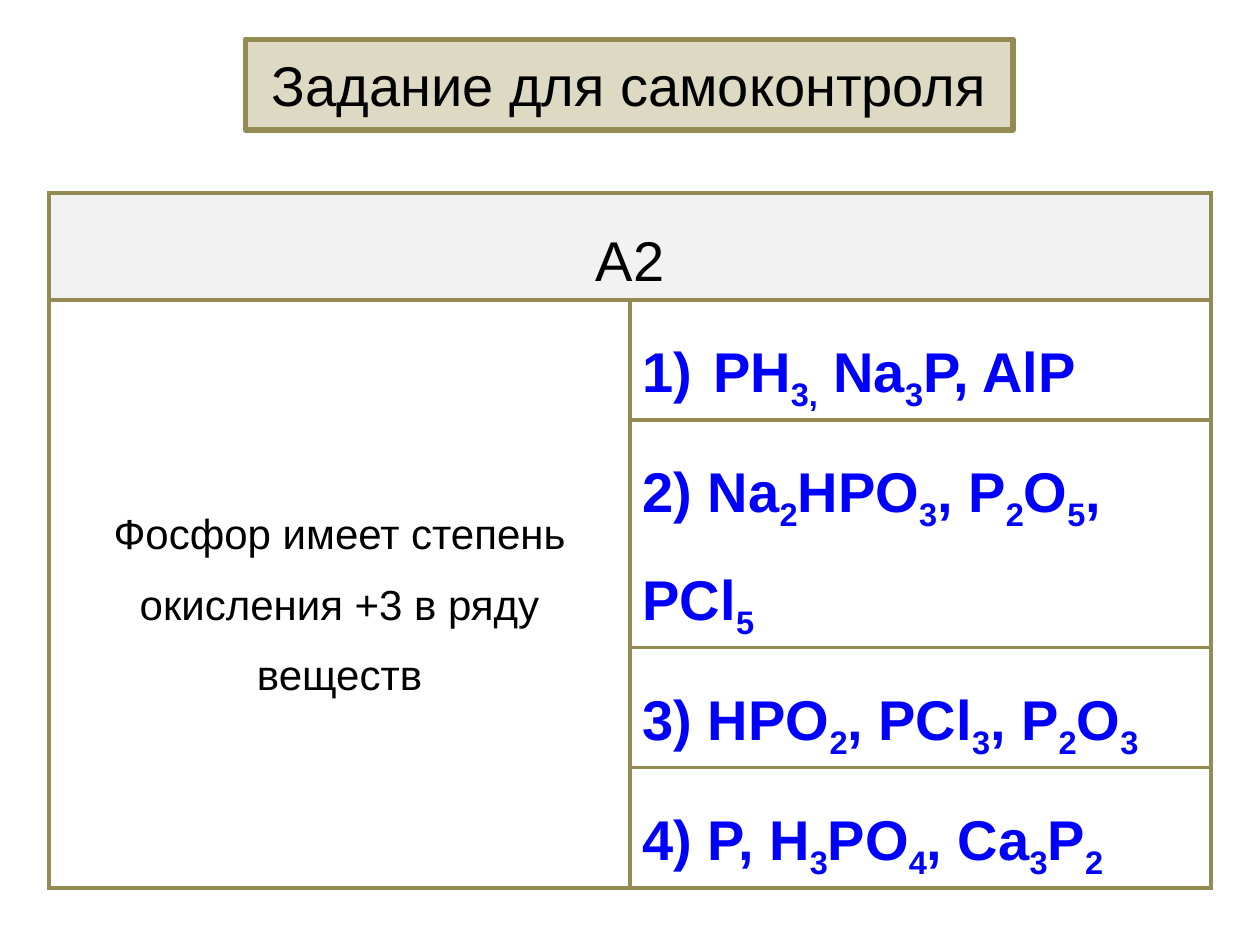
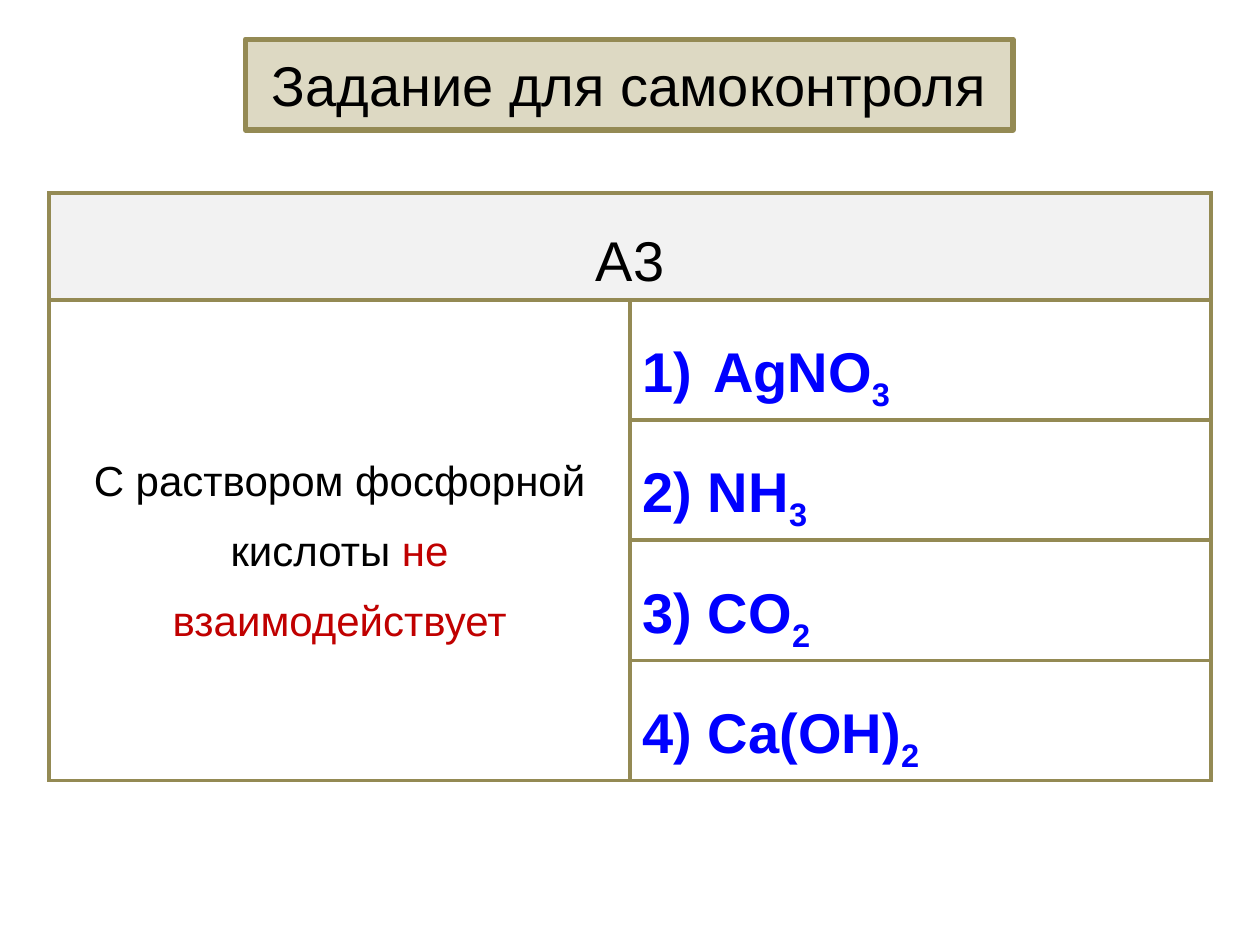
from lxml import etree
from pptx import Presentation
from pptx import util as u
from pptx.dml.color import RGBColor
from pptx.enum import text as t
from pptx.oxml.ns import qn

HUES = {"band": "DDD9C3", "edge": "948A54", "head": "F2F2F2", "page": "FFFFFF",
        "ink": "000000", "blue": "0000FF", "red": "C00000"}
FONT = "Arial"
TITLE = "Задание для самоконтроля"
TITLE_BOX = (4.95, 0.79, 15.47, 1.83)
GRID_BOX = (0.99, 3.89, 23.42)
HEAD_ROW, LINE_ROW, WRAP_ROW = 2.14, 2.42, 4.58
INDENT = 1.42

TASKS = [
    ("А2", "Фосфор имеет степень окисления +3 в ряду веществ",
     [("PH{3,} Na{3}P, AlP", LINE_ROW),
      ("2) Na{2}HPO{3}, P{2}O{5}, PCl{5}", WRAP_ROW),
      ("3) HPO{2}, PCl{3}, P{2}O{3}", LINE_ROW),
      ("4) P, H{3}PO{4}, Ca{3}P{2}", LINE_ROW)]),
    ("А3", "С раствором фосфорной кислоты {не взаимодействует}",
     [("AgNO{3}", LINE_ROW),
      ("2) NH{3}", LINE_ROW),
      ("3) CO{2}", LINE_ROW),
      ("4) Ca(OH){2}", LINE_ROW)]),
]


def hue(name):
    return RGBColor.from_string(HUES[name])


def paint(fill, name):
    fill.solid()
    fill.fore_color.rgb = hue(name)


def write(frame, words, size=32, color="ink", bold=False, align=t.PP_ALIGN.LEFT,
          space=1.0, mark=None):
    """Write one paragraph; parts in braces take the mark colour, or else go subscript."""
    para = frame.paragraphs[0]
    para.alignment = align
    para.line_spacing = space
    for i, part in enumerate(words.replace("}", "{").split("{")):
        if not part:
            continue
        run = para.add_run()
        run.text = part
        font = run.font
        font.name, font.size, font.bold = FONT, u.Pt(size), bold
        font.color.rgb = hue(mark if mark and i % 2 else color)
        if i % 2 and not mark:
            font._element.set("baseline", "-25000")
    return para


def number(para):
    """Number a paragraph as 1) with a hanging indent."""
    props = para._p.get_or_add_pPr()
    props.set("marL", str(u.Cm(INDENT)))
    props.set("indent", str(-u.Cm(INDENT)))
    etree.SubElement(props, qn("a:buFont"), typeface=FONT)
    etree.SubElement(props, qn("a:buAutoNum"), type="arabicParenR")


def frame_cell(cell, fill):
    props = cell._tc.get_or_add_tcPr()
    for side in ("lnL", "lnR", "lnT", "lnB"):
        line = etree.SubElement(props, qn("a:" + side), w=str(u.Pt(2.25)))
        solid = etree.SubElement(line, qn("a:solidFill"))
        etree.SubElement(solid, qn("a:srgbClr"), val=HUES["edge"])
    paint(cell.fill, fill)


def add_title(slide, box):
    title = slide.shapes.title
    title.left, title.top, title.width, title.height = map(u.Cm, box)
    paint(title.fill, "band")
    title.line.color.rgb = hue("edge")
    title.line.width = u.Pt(3)
    frame = title.text_frame
    frame.auto_size = t.MSO_AUTO_SIZE.NONE
    frame.vertical_anchor = t.MSO_ANCHOR.MIDDLE
    write(frame, TITLE, align=t.PP_ALIGN.CENTER)


def add_grid(slide, box, label, ask, picks):
    left, top, width = box
    rows = [HEAD_ROW] + [tall for _, tall in picks]
    grid = slide.shapes.add_table(len(rows), 2, u.Cm(left), u.Cm(top),
                                  u.Cm(width), u.Cm(sum(rows))).table
    grid.first_row = grid.horz_banding = False
    for i, tall in enumerate(rows):
        grid.rows[i].height = u.Cm(tall)
        for cell in grid.rows[i].cells:
            frame_cell(cell, "page" if i else "head")

    head, body = grid.cell(0, 0), grid.cell(1, 0)
    head.merge(grid.cell(0, 1))
    write(head.text_frame, label, align=t.PP_ALIGN.CENTER, space=1.5)

    body.merge(grid.cell(len(picks), 0))
    body.vertical_anchor = t.MSO_ANCHOR.MIDDLE
    body.margin_left = body.margin_right = u.Cm(0.18)
    body.margin_top = body.margin_bottom = 0
    write(body.text_frame, ask, size=24, align=t.PP_ALIGN.CENTER, space=1.5, mark="red")

    for i, (words, _) in enumerate(picks, 1):
        para = write(grid.cell(i, 1).text_frame, words, color="blue", bold=True, space=1.5)
        if i == 1:
            number(para)


def main():
    deck = Presentation()
    deck.slide_width, deck.slide_height = u.Cm(25.4), u.Cm(19.05)
    for task in TASKS:
        slide = deck.slides.add_slide(deck.slide_layouts[5])
        add_title(slide, TITLE_BOX)
        add_grid(slide, GRID_BOX, *task)
    deck.save("out.pptx")


if __name__ == "__main__":
    main()
